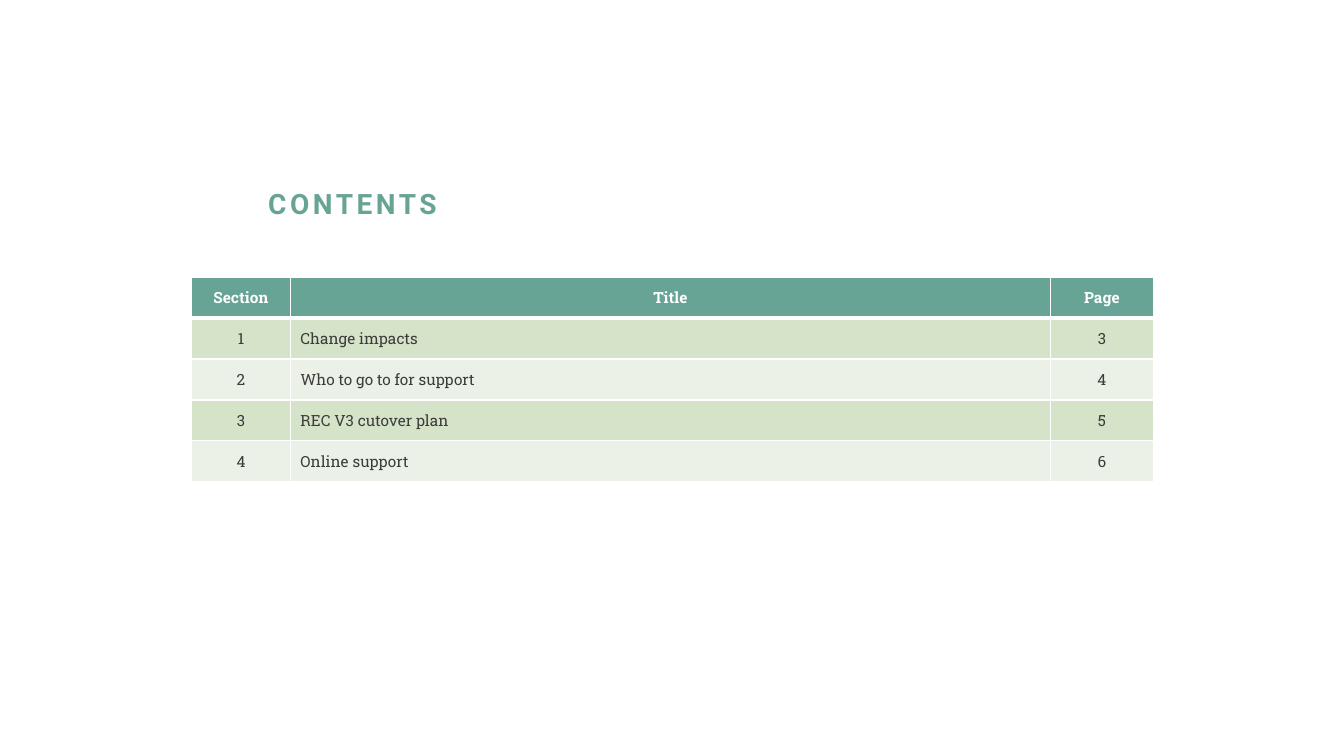
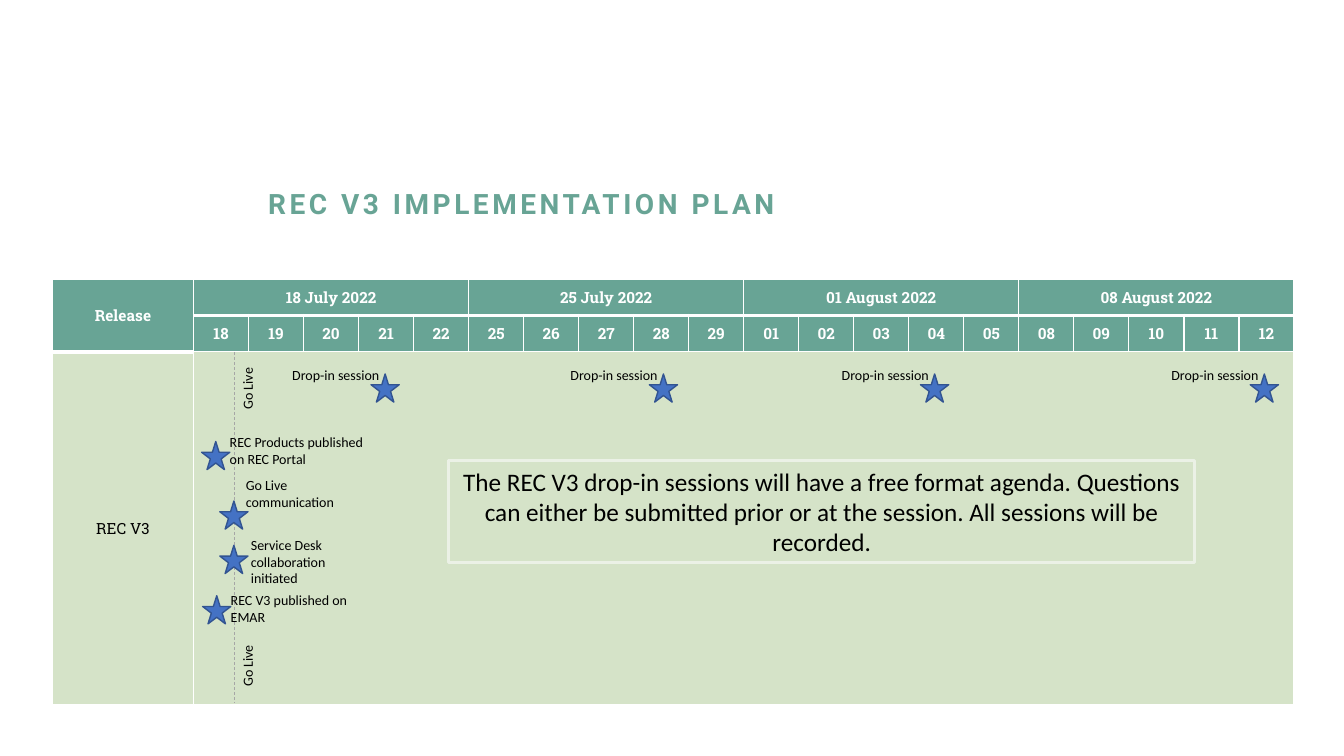
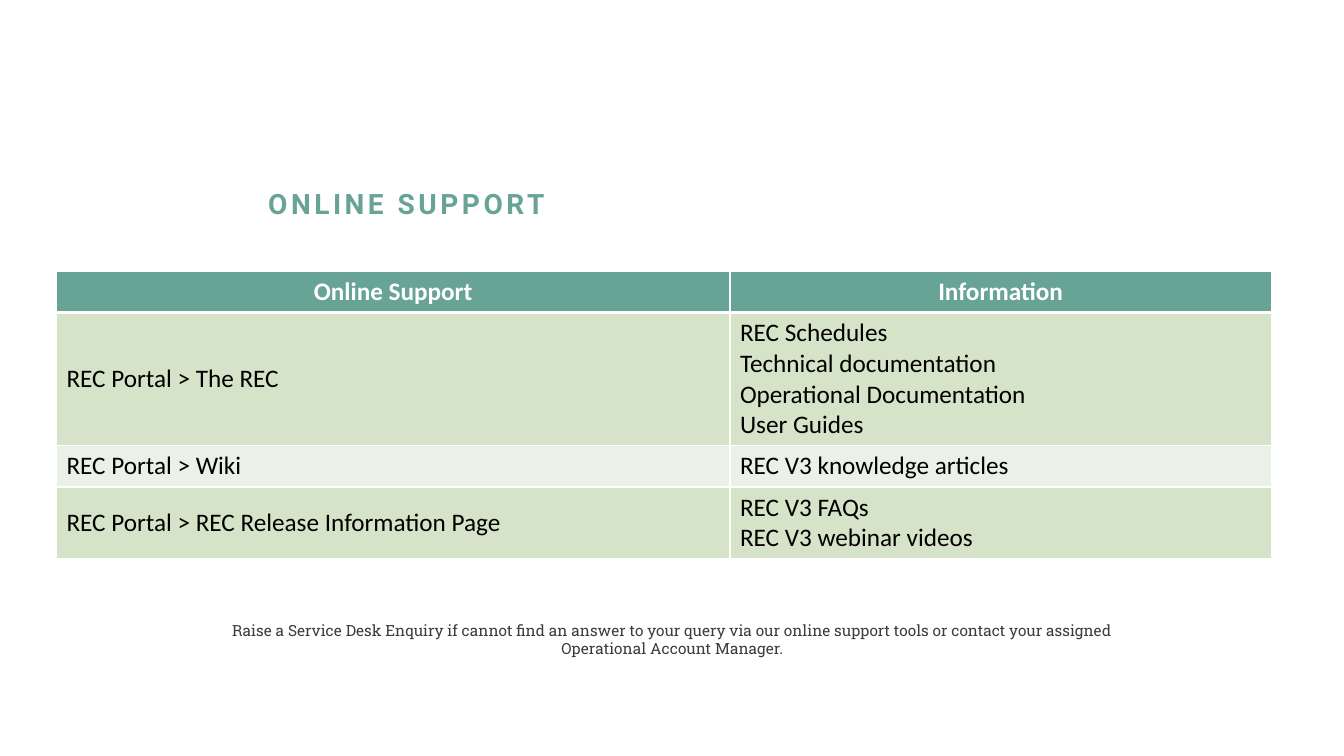
import pptx
import pptx.util
import pptx.dml.color
import pptx.enum.dml
import pptx.enum.shapes
import pptx.enum.text
import pptx.oxml.ns
import lxml.etree

ALIGN = pptx.enum.text.PP_ALIGN
ANCHOR = pptx.enum.text.MSO_ANCHOR
SHAPE = pptx.enum.shapes.MSO_SHAPE
qn = pptx.oxml.ns.qn


class Theme:
    green = "68A495"
    leaf = "D5E3C8"
    mist = "EBF1E6"
    white = "FFFFFF"
    ink = "3C3C3B"
    black = "000000"
    blue = "4472C4"
    navy = "325491"
    grey = "A6A6A6"
    head = "Roboto"
    slab = "Roboto Slab"
    body = "Calibri"
    large = 20
    big = 18
    mid = 11
    small = 10
    thin = 1
    thick = 3


def px(size):
    return pptx.util.Emu(round(size * 9144))


def rgb(tone):
    return pptx.dml.color.RGBColor.from_string(tone)


class Deck:
    def __init__(self):
        self.show = pptx.Presentation()
        self.show.slide_width = px(1333)
        self.show.slide_height = px(750)
        self.slide = None

    def page(self, title):
        self.slide = self.show.slides.add_slide(self.show.slide_layouts[5])
        shape = self.slide.shapes.title
        shape.left, shape.top, shape.width, shape.height = map(px, (256, 184, 843, 74))
        frame = shape.text_frame
        self.style(frame, title, Theme.head, Theme.large, Theme.green, bold=True)
        frame.auto_size = pptx.enum.text.MSO_AUTO_SIZE.NONE
        frame.vertical_anchor = ANCHOR.TOP
        line = frame.paragraphs[0]
        line.line_spacing = 0.9
        line.runs[0].font._element.set("spc", "250")

    def style(self, frame, text, face, size, tone, align=ALIGN.LEFT, bold=False):
        frame.text = text
        frame.word_wrap = True
        for line in frame.paragraphs:
            line.alignment = align
            for run in line.runs:
                run.font.name = face
                run.font.size = pptx.util.Pt(size)
                run.font.bold = bold
                run.font.color.rgb = rgb(tone)

    def label(self, box, text, face=Theme.body, size=Theme.small,
              tone=Theme.black, align=ALIGN.LEFT, turn=0):
        shape = self.slide.shapes.add_textbox(*map(px, box))
        shape.rotation = turn
        self.style(shape.text_frame, text, face, size, tone, align)

    def shape(self, kind, box, edge, width, fill=None):
        shape = self.slide.shapes.add_shape(kind, *map(px, box))
        shape.shadow.inherit = False
        if fill:
            shape.fill.solid()
            shape.fill.fore_color.rgb = rgb(fill)
        else:
            shape.fill.background()
        shape.line.color.rgb = rgb(edge)
        shape.line.width = pptx.util.Pt(width)
        return shape

    def star(self, left, top):
        self.shape(SHAPE.STAR_5_POINT, (left, top, 28, 28), Theme.navy, 1, Theme.blue)

    def note(self, box, text):
        shape = self.shape(SHAPE.RECTANGLE, box, Theme.mist, 2.25)
        self.style(shape.text_frame, text, Theme.body, Theme.big, Theme.black, ALIGN.CENTER)

    def dash(self, left, top, end):
        line = self.slide.shapes.add_connector(
            pptx.enum.shapes.MSO_CONNECTOR.STRAIGHT, px(left), px(top), px(left), px(end))
        line.line.color.rgb = rgb(Theme.grey)
        line.line.width = pptx.util.Pt(0.5)
        line.line.dash_style = pptx.enum.dml.MSO_LINE.DASH
        lxml.etree.SubElement(line._element.spPr, qn("a:effectLst"))

    def frame(self, cell):
        props = cell._tc.get_or_add_tcPr()
        for side in "LRTB":
            edge = lxml.etree.SubElement(props, qn("a:ln" + side), w=str(Theme.thin * 12700))
            fill = lxml.etree.SubElement(edge, qn("a:solidFill"))
            lxml.etree.SubElement(fill, qn("a:srgbClr"), val=Theme.white)

    def rule(self, table, row, cols):
        for col in cols:
            for place, side in ((row, "B"), (row + 1, "T")):
                props = table.cell(place, col)._tc.tcPr
                props.find(qn("a:ln" + side)).set("w", str(Theme.thick * 12700))

    def grid(self, left, top, cols, rows, data, face, size, tone, mid=(), heads=1):
        table = self.slide.shapes.add_table(
            len(rows), len(cols), px(left), px(top), px(sum(cols)), px(sum(rows))).table
        table.first_row = table.horz_banding = False
        for col, width in zip(table.columns, cols):
            col.width = px(width)
        for row, height in zip(table.rows, rows):
            row.height = px(height)
        for r, texts in enumerate(data):
            head = r < heads
            band = (Theme.leaf, Theme.mist)[(r - heads) % 2]
            for c, text in enumerate(texts):
                cell = table.cell(r, c)
                self.frame(cell)
                cell.fill.solid()
                cell.fill.fore_color.rgb = rgb(Theme.green if head else band)
                cell.vertical_anchor = ANCHOR.MIDDLE
                self.style(cell.text_frame, text, face, size,
                           Theme.white if head else tone,
                           ALIGN.CENTER if head or c in mid else ALIGN.LEFT, head)
        self.rule(table, 0, range(len(cols)))
        return table


def contents(deck):
    deck.page("CONTENTS")
    names = ("Change impacts", "Who to go to for support",
             "REC V3 cutover plan", "Online support")
    data = [("Section", "Title", "Page")]
    data += [(str(n), name, str(n + 2)) for n, name in enumerate(names, 1)]
    deck.grid(190, 275, (98, 754, 102), [40.6] * 5, data,
              Theme.slab, Theme.mid, Theme.ink, mid=(0, 2))


def plan(deck):
    deck.page("REC V3 IMPLEMENTATION PLAN")
    weeks = ((18, "July"), (25, "July"), (1, "August"), (8, "August"))
    top, days = ["Release"], [""]
    for first, month in weeks:
        top += [f"{first:02} {month} 2022"] + [""] * 4
        days += [f"{first + n:02}" for n in range(5)]
    data = (top, days, ["REC V3"] + [""] * 20)
    table = deck.grid(52, 277, [140] + [1092 / 20] * 20, (36, 36, 350), data,
                      Theme.slab, Theme.mid, Theme.black, mid=(0,), heads=2)
    deck.rule(table, 1, (0,))
    table.cell(0, 0).merge(table.cell(1, 0))
    for col in range(1, 21, 5):
        table.cell(0, col).merge(table.cell(0, col + 4))
    table.cell(2, 1).merge(table.cell(2, 20))

    deck.dash(232, 349, 697)
    for y in (371, 646):
        deck.label((214, y, 63, 27), "Go Live", turn=270)
    events = [
        (218, 497, (234, 468, 136, 44), "Go Live communication"),
        (218, 541, (239, 527, 136, 61), "Service Desk collaboration initiated"),
        (200, 438, (218, 425, 168, 44), "REC Products published on REC Portal"),
        (201, 591, (219, 582, 168, 44), "REC V3 published on EMAR"),
    ]
    events += [(x, 371, (x - 88, 359, 136, 27), "Drop-in session")
               for x in (368, 644, 913, 1240)]
    for x, y, box, text in events:
        deck.star(x, y)
        deck.label(box, text)
    deck.note((445, 457, 740, 101),
              "The REC V3 drop-in sessions will have a free format agenda. Questions can "
              "either be submitted prior or at the session. All sessions will be recorded.")


def support(deck):
    deck.page("ONLINE SUPPORT")
    data = (
        ("Online Support", "Information"),
        ("REC Portal > The REC",
         "REC Schedules\nTechnical documentation\nOperational Documentation\nUser Guides"),
        ("REC Portal > Wiki", "REC V3 knowledge articles"),
        ("REC Portal > REC Release Information Page", "REC V3 FAQs\nREC V3 webinar videos"),
    )
    deck.grid(56, 269, (668, 537), (41, 130, 41, 69), data,
              Theme.body, Theme.big, Theme.black)
    deck.label((190, 611, 954, 48),
               "Raise a Service Desk Enquiry if cannot find an answer to your query via our "
               "online support tools or contact your assigned Operational Account Manager.",
               Theme.slab, Theme.mid, Theme.ink, ALIGN.CENTER)


def main():
    deck = Deck()
    contents(deck)
    plan(deck)
    support(deck)
    deck.show.save("out.pptx")


if __name__ == "__main__":
    main()
